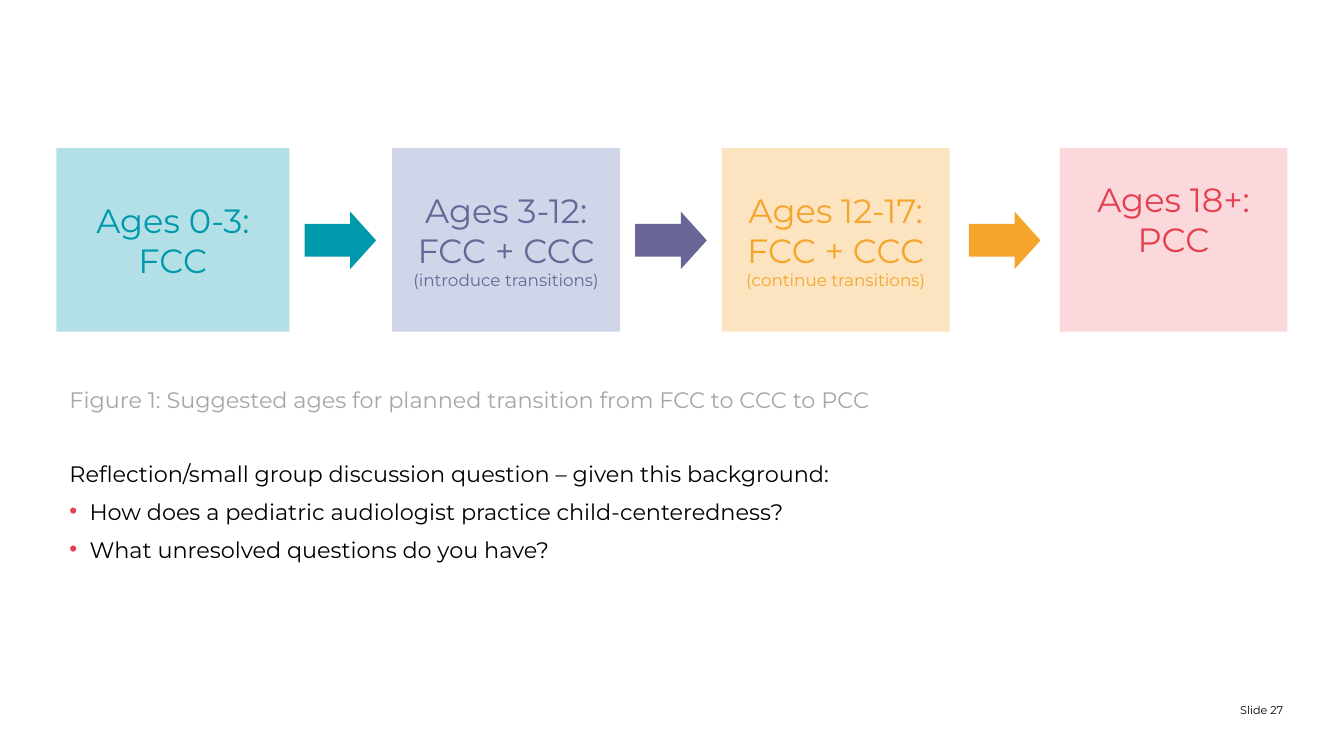
from lxml import etree
from pptx import Presentation
from pptx.dml.color import RGBColor
from pptx.enum.shapes import MSO_SHAPE
from pptx.enum.text import MSO_ANCHOR, PP_ALIGN
from pptx.oxml.ns import qn
from pptx.util import Inches, Pt

RECTANGLE, RIGHT_ARROW = MSO_SHAPE.RECTANGLE, MSO_SHAPE.RIGHT_ARROW
MIDDLE, BOTTOM = MSO_ANCHOR.MIDDLE, MSO_ANCHOR.BOTTOM
CENTER, RIGHT = PP_ALIGN.CENTER, PP_ALIGN.RIGHT

FONT = "Montserrat"
TEAL, PURPLE, ORANGE, RED = "0099AC", "676696", "F5A52B", "E63E4D"
BLACK, GRAY = "000000", "A6A6A6"
LINE_HEIGHT = 0.41

STAGES = [
    (0.56, 2.31, "B3E0E6", TEAL, [("Ages 0-3:", 24), ("FCC", 24)], 0),
    (3.89, 2.26, "D0D5E9", PURPLE,
     [("Ages 3-12:", 24), ("FCC + CCC", 24), ("(introduce transitions)", 12)], 0),
    (7.16, 2.26, "FCE4C0", ORANGE,
     [("Ages 12-17:", 24), ("FCC + CCC", 24), ("(continue transitions)", 12)], 0),
    (10.51, 2.26, "FAD8DB", RED, [("Ages 18+: PCC", 24)], LINE_HEIGHT),
]
ARROWS = [(3.02, TEAL), (6.3, PURPLE), (9.61, ORANGE)]
DISCUSSION = [
    ("Figure 1: Suggested ages for planned transition from FCC to CCC to PCC", GRAY, 32, False),
    ("Reflection/small group discussion question – given this background:", BLACK, 6, False),
    ("How does a pediatric audiologist practice child-centeredness?", BLACK, 6, True),
    ("What unresolved questions do you have?", BLACK, 6, True),
]


def rgb(value):
    """Return the colour for a hex string."""
    return RGBColor.from_string(value)


def set_margins(frame, left, top, right, bottom):
    """Set the four insets of a text frame in inches."""
    frame.margin_left, frame.margin_top = Inches(left), Inches(top)
    frame.margin_right, frame.margin_bottom = Inches(right), Inches(bottom)


def write(para, text, size, color):
    """Put text into a paragraph and format its runs."""
    para.text = text
    for span in para.runs:
        span.font.name = FONT
        span.font.size = Pt(size)
        span.font.color.rgb = rgb(color)


def next_paragraph(frame, index):
    """Return the first paragraph of a frame, or a new one after it."""
    return frame.add_paragraph() if index else frame.paragraphs[0]


def add_bullet(para, color):
    """Give a paragraph a hanging coloured bullet."""
    properties = para._p.get_or_add_pPr()
    properties.set("marL", str(Inches(0.2)))
    properties.set("indent", str(Inches(-0.2)))
    bullet_color = etree.SubElement(properties, qn("a:buClr"))
    etree.SubElement(bullet_color, qn("a:srgbClr"), val=color)
    etree.SubElement(properties, qn("a:buFont"), typeface="Arial")
    etree.SubElement(properties, qn("a:buChar"), char="•")


def add_filled_shape(page, kind, left, top, width, height, fill):
    """Add a flat preset shape without outline."""
    shape = page.shapes.add_shape(
        kind, Inches(left), Inches(top), Inches(width), Inches(height))
    shape.shadow.inherit = False
    shape.fill.solid()
    shape.fill.fore_color.rgb = rgb(fill)
    shape.line.fill.background()
    return shape


def add_stage(page, left, width, fill, color, lines, bottom):
    """Add one age stage with its centred label."""
    box = add_filled_shape(page, RECTANGLE, left, 1.47, width, 1.82, fill)
    frame = box.text_frame
    frame.word_wrap = True
    frame.vertical_anchor = MIDDLE
    set_margins(frame, 0.12, 0, 0.12, bottom)
    for index, (text, size) in enumerate(lines):
        para = next_paragraph(frame, index)
        para.alignment = CENTER
        write(para, text, size, color)


def add_arrow(page, left, color):
    """Add the block arrow between two stages."""
    arrow = add_filled_shape(page, RIGHT_ARROW, left, 2.1, 0.71, 0.57, color)
    arrow.adjustments[0] = 0.57
    arrow.adjustments[1] = 0.45


def add_text_box(page, left, top, width, height):
    """Add a wrapping text box and return its frame."""
    box = page.shapes.add_textbox(
        Inches(left), Inches(top), Inches(width), Inches(height))
    box.text_frame.word_wrap = True
    return box.text_frame


def add_discussion(page):
    """Add the caption and the discussion questions."""
    frame = add_text_box(page, 0.59, 3.75, 12.15, 2.58)
    for index, (text, color, space_after, bulleted) in enumerate(DISCUSSION):
        para = next_paragraph(frame, index)
        para.line_spacing = 1.1
        para.space_after = Pt(space_after)
        if bulleted:
            add_bullet(para, RED)
        write(para, text, 16, color)


def add_slide_number(page):
    """Add the slide number at the lower right."""
    frame = add_text_box(page, 11.9, 6.87, 0.83, 0.24)
    frame.vertical_anchor = BOTTOM
    set_margins(frame, 0, 0, 0, 0)
    para = frame.paragraphs[0]
    para.alignment = RIGHT
    write(para, "Slide 27", 8, BLACK)


def main():
    """Build the slide and save the deck."""
    deck = Presentation()
    deck.slide_width, deck.slide_height = Inches(13.33), Inches(7.5)
    page = deck.slides.add_slide(deck.slide_layouts[6])
    add_slide_number(page)
    add_discussion(page)
    for stage in STAGES:
        add_stage(page, *stage)
    for left, color in ARROWS:
        add_arrow(page, left, color)
    deck.save("out.pptx")


if __name__ == "__main__":
    main()
